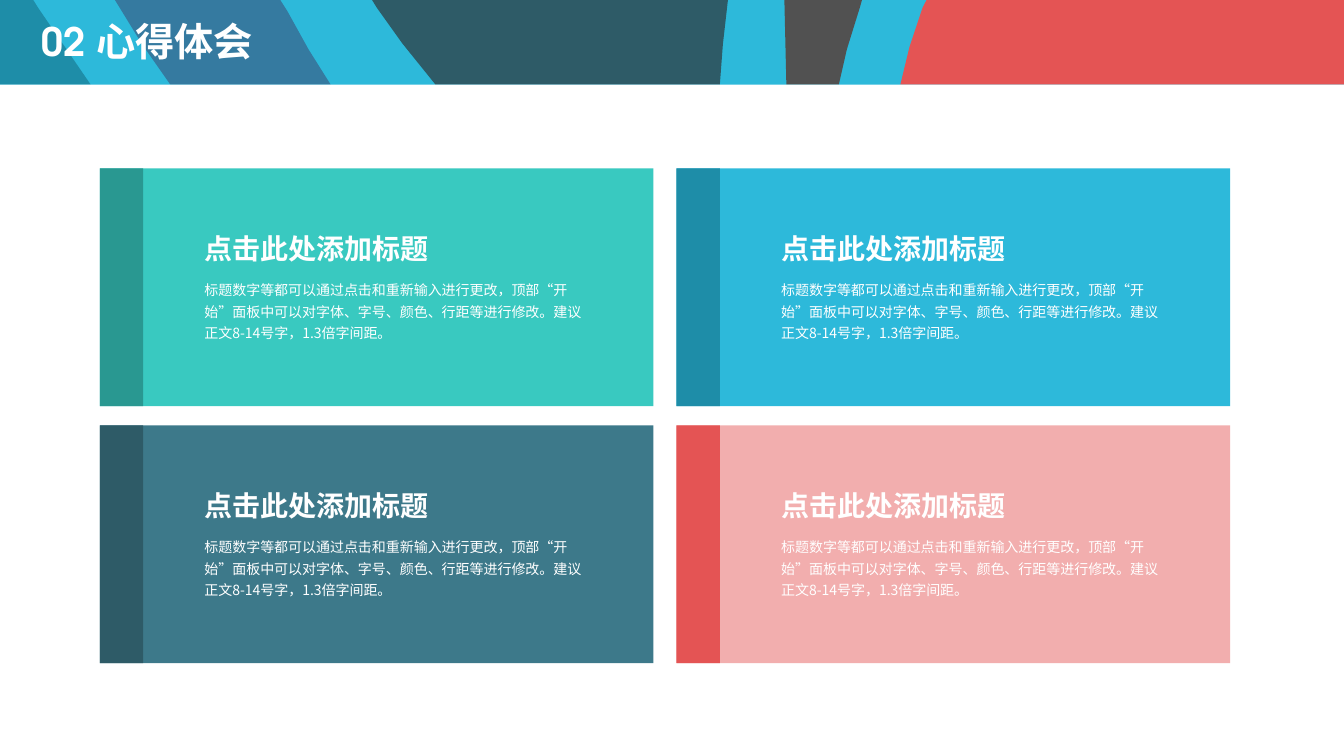
"""Build a slide with a ribbon header and a two by two grid of text cards."""
from lxml.etree import SubElement
from pptx import Presentation
from pptx.dml.color import RGBColor
from pptx.enum.shapes import MSO_SHAPE
from pptx.enum.text import MSO_ANCHOR, MSO_AUTO_SIZE, PP_ALIGN
from pptx.oxml.ns import qn

PX = 9144
PT = 12700
WIDE, HIGH, BAND = 1333, 750, 84
THEME = {
    "white": "FFFFFF", "sky": "2DB9DA", "ocean": "1E8DA8", "blue": "357AA0",
    "pine": "2E5B67", "slate": "3D798A", "gray": "515151", "red": "E45454",
    "pink": "F2AEAE", "mint": "39C9C0", "jade": "299891",
    "head": "TeX Gyre Adventor", "text": "Noto Sans CJK SC",
    "title": 28, "label": 20, "body": 10,
}


def paint(shape, color):
    shape.shadow.inherit = False
    shape.fill.solid()
    shape.fill.fore_color.rgb = RGBColor.from_string(THEME[color])
    shape.line.fill.background()


def write(frame, words, face, size, space):
    para = frame.paragraphs[0]
    para.alignment = PP_ALIGN.LEFT
    para.line_spacing = space
    run = para.add_run()
    run.text = words
    font = run.font
    font.name = THEME[face]
    font.size = THEME[size] * PT
    font.bold = face == "head"
    font.color.rgb = RGBColor.from_string(THEME["white"])
    SubElement(font._element, qn("a:ea"), typeface=THEME["text"])


deck = Presentation()
deck.slide_width, deck.slide_height = WIDE * PX, HIGH * PX
slide = deck.slides.add_slide(deck.slide_layouts[5])
slide.background.fill.solid()
slide.background.fill.fore_color.rgb = RGBColor.from_string(THEME["sky"])

ribbons = [
    ("ocean", [(0, 0), (33, 0), (38, 8), (90, BAND), (0, BAND)]),
    ("blue", [(114, 0), (278, 0), (285, 11), (306, 49), (328, BAND),
              (169, BAND), (141, 44)]),
    ("pine", [(369, 0), (722, 0), (717, 44), (714, BAND), (432, BAND),
              (399, 43), (374, 8)]),
    ("gray", [(778, 0), (855, 0), (853, 7), (840, 49), (832, BAND),
              (780, BAND)]),
    ("red", [(919, 0), (WIDE, 0), (WIDE, BAND), (893, BAND), (902, 47),
             (915, 8)]),
]
for color, points in ribbons:
    pen = slide.shapes.build_freeform(*points[0], scale=PX)
    pen.add_line_segments(points[1:], close=True)
    paint(pen.convert_to_shape(), color)

page = slide.shapes.add_shape(
    MSO_SHAPE.RECTANGLE, 0, BAND * PX, WIDE * PX, (HIGH - BAND) * PX)
paint(page, "white")

title = slide.shapes.title
title.left, title.top, title.width, title.height = (
    n * PX for n in (31, 11, 848, 65))
title.text_frame.vertical_anchor = MSO_ANCHOR.MIDDLE
write(title.text_frame, "02 心得体会", "head", "title", 0.9)
title.element.getparent().append(title.element)

label = "点击此处添加标题"
body = ("标题数字等都可以通过点击和重新输入进行更改，顶部“开始”面板中可以"
        "对字体、字号、颜色、行距等进行修改。建议正文8-14号字，1.3倍字间距。")
cards = [("mint", "jade"), ("sky", "ocean"), ("slate", "pine"), ("pink", "red")]
for i, (fill, edge) in enumerate(cards):
    row, col = divmod(i, 2)
    left, top = 99 + 572 * col, 167 + 255 * row
    card = slide.shapes.add_group_shape()
    for color, width in ((fill, 549), (edge, 43)):
        paint(card.shapes.add_shape(
            MSO_SHAPE.RECTANGLE, left * PX, top * PX, width * PX, 236 * PX), color)
    for words, face, size, drop, width, height, wrap in (
            (body, "text", "body", 102, 397, 76, True),
            (label, "head", "label", 48, 245, 54, False)):
        box = card.shapes.add_textbox(
            (left + 94) * PX, (top + drop) * PX, width * PX, height * PX)
        box.text_frame.word_wrap = wrap
        box.text_frame.auto_size = MSO_AUTO_SIZE.SHAPE_TO_FIT_TEXT
        write(box.text_frame, words, face, size, 1.3)

deck.save("out.pptx")
